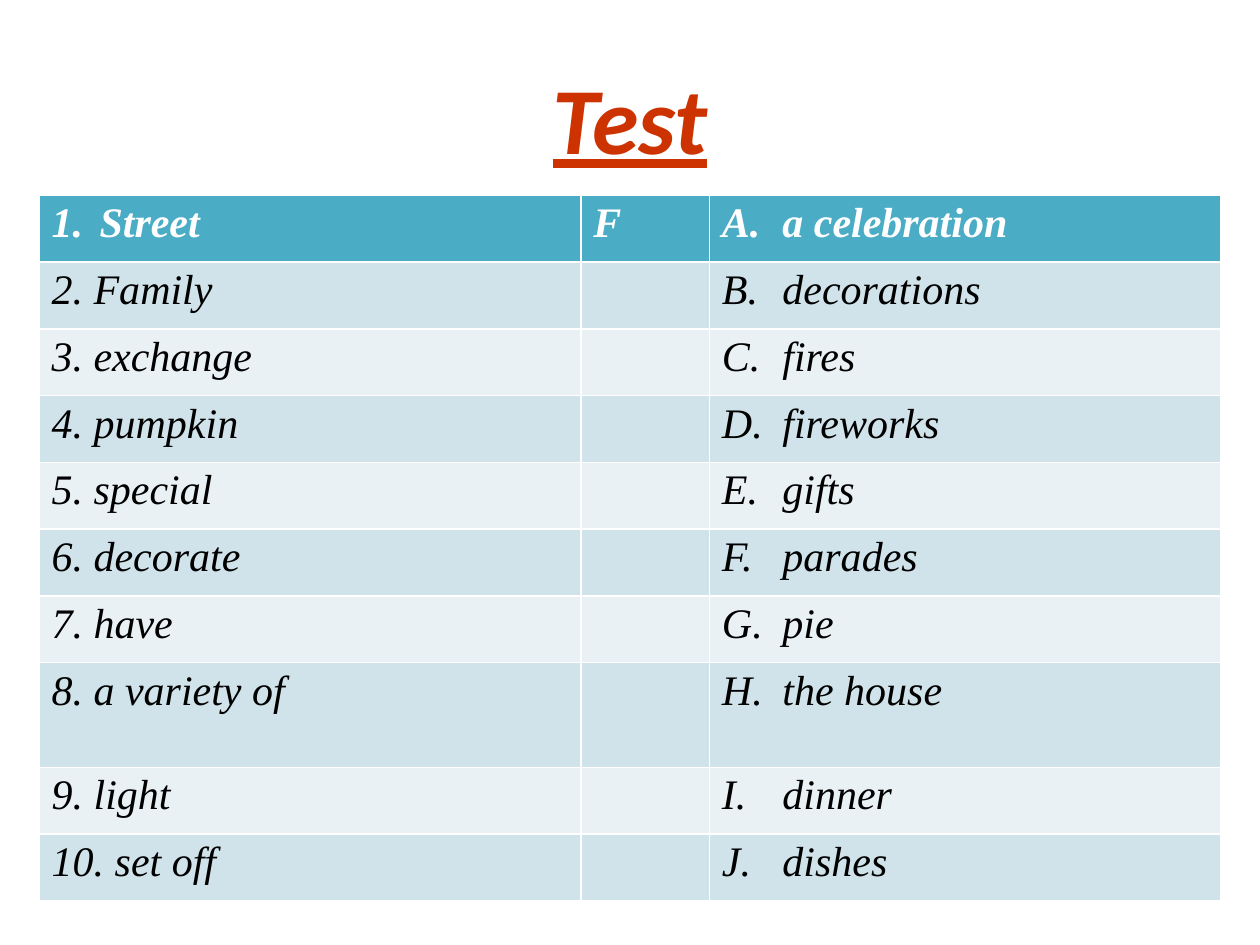
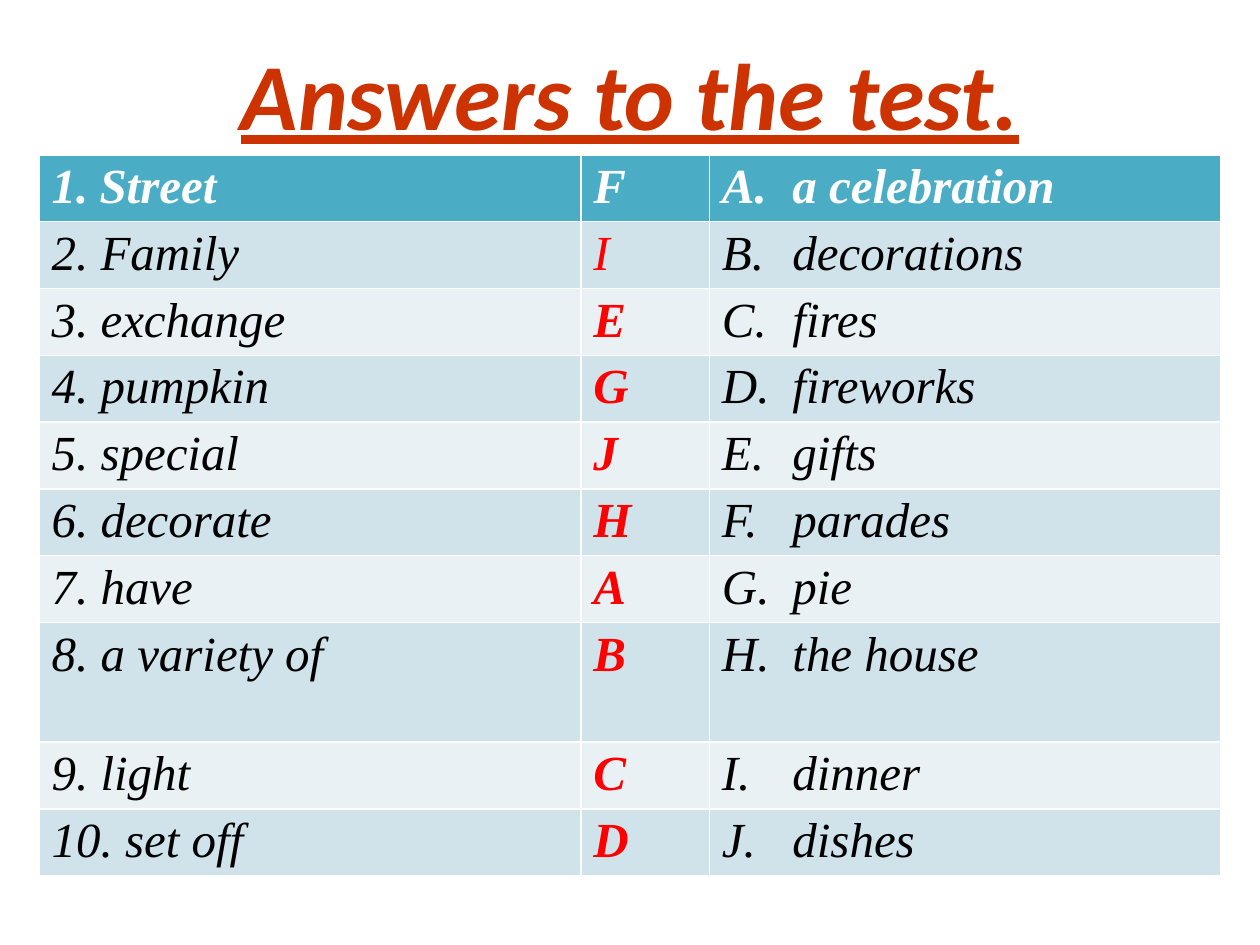
from pptx import Presentation
from pptx.dml.color import RGBColor as RGB
from pptx.enum.text import MSO_ANCHOR, PP_ALIGN
from pptx.oxml.ns import qn
from pptx.util import Inches, Pt
from lxml import etree

COLORS = {"title": "CC3300", "head": "4BACC6", "dark": "D0E3EA", "light": "E9F1F5",
          "white": "FFFFFF", "black": "000000", "answer": "FF0000"}
COL_WIDTHS = [4.3, 1.02, 4.06]
ROW_H = 0.53
TALL_ROW = 7

words = ["Street", "Family", "exchange", "pumpkin", "special",
         "decorate", "have", "a variety of", "light", "set off"]
options = ["a celebration", "decorations", "fires", "fireworks", "gifts",
           "parades", "pie", "the house", "dinner", "dishes"]
letters = "ABCDEFGHIJ"

slides = [
    {"title": "Test", "title_y": 0.3, "table_y": 1.55, "size": 24,
     "tall": 0.83, "indent": 0.48, "answers": ["F"] + [""] * 9},
    {"title": "Answers to the test.", "title_y": 0.11, "table_y": 1.23, "size": 28,
     "tall": 0.95, "indent": 0.56, "answers": list("FIEGJHABCD")},
]


def add_text(p, text, color, **fmt):
    r = p.add_run()
    r.text = text
    for name, value in fmt.items():
        setattr(r.font, name, value)
    r.font.color.rgb = RGB.from_string(COLORS[color])


def hang(p, indent):
    pPr = p._p.get_or_add_pPr()
    pPr.set("marL", str(Inches(indent)))
    pPr.set("indent", str(-Inches(indent)))
    return pPr


prs = Presentation()
prs.slide_width, prs.slide_height = Inches(10), Inches(7.5)

for info in slides:
    s = prs.slides.add_slide(prs.slide_layouts[5])

    # Title
    sp = s.shapes.title
    sp.left, sp.top = Inches(0.5), Inches(info["title_y"])
    sp.width, sp.height = Inches(9), Inches(1.25)
    tf = sp.text_frame
    tf.vertical_anchor = MSO_ANCHOR.MIDDLE
    p = tf.paragraphs[0]
    p.alignment = PP_ALIGN.CENTER
    add_text(p, info["title"], "title", name="Calibri", size=Pt(54),
             bold=True, italic=True, underline=True)

    # Table grid
    heights = [ROW_H] * len(words)
    heights[TALL_ROW] = info["tall"]
    table = s.shapes.add_table(len(words), len(COL_WIDTHS), Inches(0.31),
                               Inches(info["table_y"]), Inches(sum(COL_WIDTHS)),
                               Inches(sum(heights))).table
    for col, width in zip(table.columns, COL_WIDTHS):
        col.width = Inches(width)
    for row, height in zip(table.rows, heights):
        row.height = Inches(height)

    # Words, answers and options
    for i, (word, answer, option) in enumerate(zip(words, info["answers"], options)):
        head = i == 0
        fill = "head" if head else ("dark" if i % 2 else "light")
        texts = [word if head else f"{i + 1}. {word}", answer, f"{letters[i]}.\t{option}"]
        for j, text in enumerate(texts):
            cell = table.cell(i, j)
            cell.fill.solid()
            cell.fill.fore_color.rgb = RGB.from_string(COLORS[fill])
            cell.margin_top = cell.margin_bottom = Inches(0.04)
            p = cell.text_frame.paragraphs[0]
            if head and j == 0:
                pPr = hang(p, 0.38)
                etree.SubElement(pPr, qn("a:buFont"), typeface="+mj-lt")
                etree.SubElement(pPr, qn("a:buAutoNum"), type="arabicPeriod")
            elif j == 2:
                hang(p, info["indent"])
            if text:
                color = "white" if head else ("answer" if j == 1 else "black")
                add_text(p, text, color, name="Times New Roman", size=Pt(info["size"]),
                         bold=head or (j == 1 and i > 1), italic=True)

prs.save("out.pptx")
